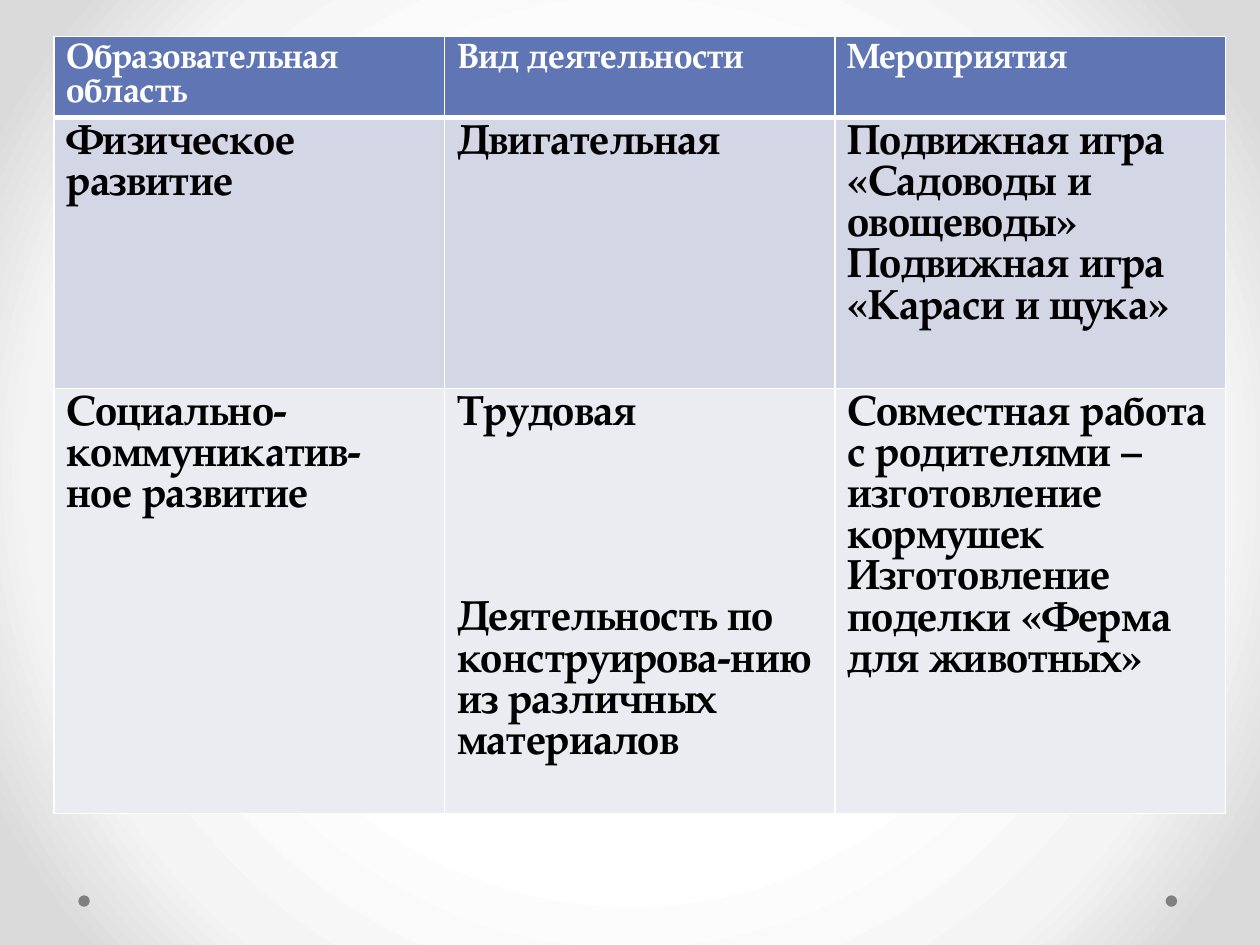
from pptx import Presentation
from pptx import util as u
from pptx.dml.color import RGBColor
from pptx.enum import shapes
from pptx.oxml import parse_xml
from pptx.oxml.ns import nsdecls

WHITE, BLACK, GREY = "FFFFFF", "000000", "808080"
HEAD, BAND, PLAIN = "6076B4", "D2D6E5", "EAECF2"


def rgb(value):
    return RGBColor.from_string(value)


class Deck:
    font = {"name": "TeX Gyre Pagella", "bold": True}

    def __init__(self, prs):
        self.slide = prs.slides.add_slide(prs.slide_layouts[6])

    def background(self, stops):
        gs = "".join(f'<a:gs pos="{pos * 1000}"><a:srgbClr val="{color}"/></a:gs>'
                     for pos, color in stops)
        bg = parse_xml(
            f'<p:bg {nsdecls("p", "a")}><p:bgPr><a:gradFill rotWithShape="1">'
            f'<a:gsLst>{gs}</a:gsLst><a:path path="circle">'
            '<a:fillToRect l="50000" t="50000" r="50000" b="50000"/></a:path>'
            '</a:gradFill><a:effectLst/></p:bgPr></p:bg>')
        self.slide.element.cSld.insert(0, bg)

    def dot(self, x, y, size, color):
        sp = self.slide.shapes.add_shape(
            shapes.MSO_SHAPE.OVAL, u.Cm(x), u.Cm(y), u.Cm(size), u.Cm(size))
        sp.shadow.inherit = False
        sp.fill.solid()
        sp.fill.fore_color.rgb = rgb(color)
        sp.line.fill.background()

    def cell_text(self, cell, paragraphs, size, color):
        tf = cell.text_frame
        for i, item in enumerate(paragraphs):
            words, gap = item if isinstance(item, tuple) else (item, 0)
            p = tf.add_paragraph() if i else tf.paragraphs[0]
            if gap:
                p.space_before = u.Pt(gap)
            r = p.add_run()
            r.text = words
            for key, value in {**self.font, "size": u.Pt(size)}.items():
                setattr(r.font, key, value)
            r.font.color.rgb = rgb(color)

    def borders(self, cell, widths):
        tc_pr = cell._tc.get_or_add_tcPr()
        for i, (side, width) in enumerate(widths.items()):
            tc_pr.insert(i, parse_xml(
                f'<a:ln{side} {nsdecls("a")} w="{u.Pt(width)}"><a:solidFill>'
                f'<a:srgbClr val="{WHITE}"/></a:solidFill></a:ln{side}>'))

    def table(self, x, y, col_width, heights, rows, formats):
        n_cols = len(rows[0])
        table = self.slide.shapes.add_table(
            len(rows), n_cols, u.Cm(x), u.Cm(y),
            u.Cm(col_width * n_cols), u.Cm(sum(heights))).table
        for col in table.columns:
            col.width = u.Cm(col_width)
        for i, (height, row, (fill, size, color)) in enumerate(zip(heights, rows, formats)):
            table.rows[i].height = u.Cm(height)
            for j, paragraphs in enumerate(row):
                cell = table.cell(i, j)
                cell.fill.solid()
                cell.fill.fore_color.rgb = rgb(fill)
                self.cell_text(cell, paragraphs, size, color)
                self.borders(cell, {"L": 1, "R": 1, "T": 3 if i == 1 else 1,
                                    "B": 3 if i == 0 else 1})


prs = Presentation()
prs.slide_width, prs.slide_height = u.Cm(25.4), u.Cm(19.05)
deck = Deck(prs)

# Background and corner dots
deck.background([(50, WHITE), (76, "F4F4F4"), (92, "DADADA")])
for x in (23.5, 1.58):
    deck.dot(x, 18.05, 0.23, GREY)

# Table of activities
rows = [
    [["Образовательная область"], ["Вид деятельности"], ["Мероприятия"]],
    [["Физическое развитие"],
     ["Двигательная"],
     ["Подвижная игра «Садоводы и овощеводы»",
      "Подвижная игра «Караси и щука»"]],
    [["Социально-коммуникатив-", "ное развитие"],
     ["Трудовая",
      ("Деятельность по конструирова-нию из различных материалов", 94)],
     ["Совместная работа с родителями – изготовление кормушек",
      "Изготовление поделки «Ферма для животных»"]],
]
formats = [(HEAD, 20, WHITE), (BAND, 24, BLACK), (PLAIN, 24, BLACK)]
deck.table(1.09, 0.74, 7.87, [1.6, 5.46, 8.56], rows, formats)

prs.save("out.pptx")
